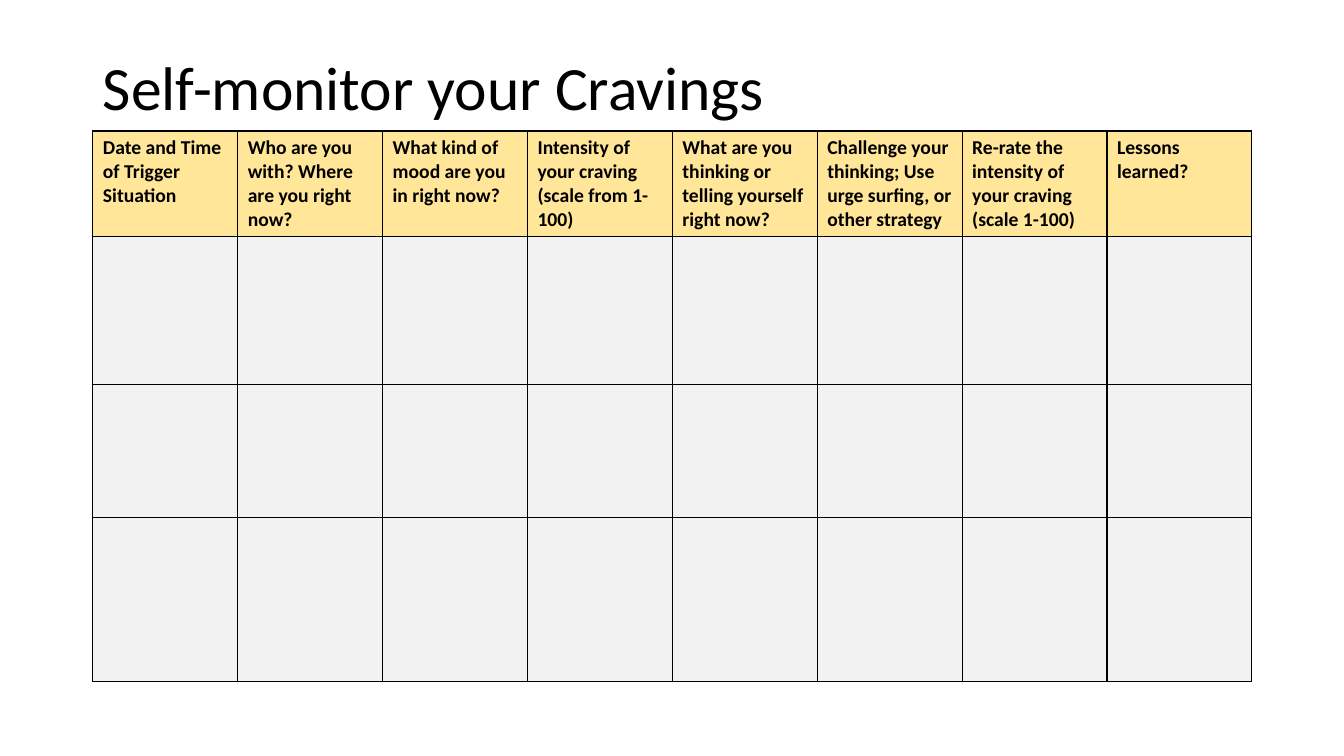
from lxml import etree
from pptx import Presentation
from pptx import util as u
from pptx.dml.color import RGBColor
from pptx.enum import text
from pptx.oxml import ns

# Content
TITLE = "Self-monitor your Cravings"
HEADS = [
    "Date and Time of Trigger Situation",
    "Who are you with? Where are you right now?",
    "What kind of mood are you in right now?",
    "Intensity of your craving (scale from 1-100)",
    "What are you thinking or telling yourself right now?",
    "Challenge your thinking; Use urge surfing, or other strategy",
    "Re-rate the intensity of your craving (scale 1-100)",
    "Lessons learned?",
]
INK, GOLD, GREY = "000000", "FFE699", "F2F2F2"

# Layout in centimetres
LEFT, TOP, WIDTH = 2.34, 3.3, 29.21
ROWS = [2.66, 3.73, 3.35, 4.14]


def tint(color, code):
    color.rgb = RGBColor.from_string(code)


def style(frame, size, bold):
    for run in frame.paragraphs[0].runs:
        run.font.name = "Calibri"
        run.font.size = u.Pt(size)
        run.font.bold = bold
        tint(run.font.color, INK)


def border(cell):
    props = cell._tc.get_or_add_tcPr()
    for side in ("a:lnL", "a:lnR", "a:lnT", "a:lnB"):
        line = etree.SubElement(props, ns.qn(side), w=str(u.Pt(1)))
        fill = etree.SubElement(line, ns.qn("a:solidFill"))
        etree.SubElement(fill, ns.qn("a:srgbClr"), val=INK)


def main():
    deck = Presentation()
    deck.slide_width, deck.slide_height = u.Cm(33.87), u.Cm(19.05)
    slide = deck.slides.add_slide(deck.slide_layouts[5])

    # Title
    title = slide.shapes.title
    title.left, title.top = u.Cm(LEFT), u.Cm(0.43)
    title.width, title.height = u.Cm(WIDTH), u.Cm(3.68)
    frame = title.text_frame
    frame.text = TITLE
    frame.vertical_anchor = text.MSO_ANCHOR.MIDDLE
    frame.paragraphs[0].alignment = text.PP_ALIGN.LEFT
    frame.paragraphs[0].line_spacing = 0.9
    style(frame, 44, False)

    # Table grid
    table = slide.shapes.add_table(
        len(ROWS), len(HEADS), u.Cm(LEFT), u.Cm(TOP),
        u.Cm(WIDTH), u.Cm(sum(ROWS))).table
    for col in table.columns:
        col.width = u.Cm(WIDTH / len(HEADS))
    for row, high in zip(table.rows, ROWS):
        row.height = u.Cm(high)

    # Borders and fills
    for r, row in enumerate(table.rows):
        for cell in row.cells:
            border(cell)
            cell.fill.solid()
            tint(cell.fill.fore_color, GREY if r else GOLD)

    # Header text
    for cell, head in zip(table.rows[0].cells, HEADS):
        cell.text_frame.text = head
        style(cell.text_frame, 14, True)

    deck.save("out.pptx")


if __name__ == "__main__":
    main()
